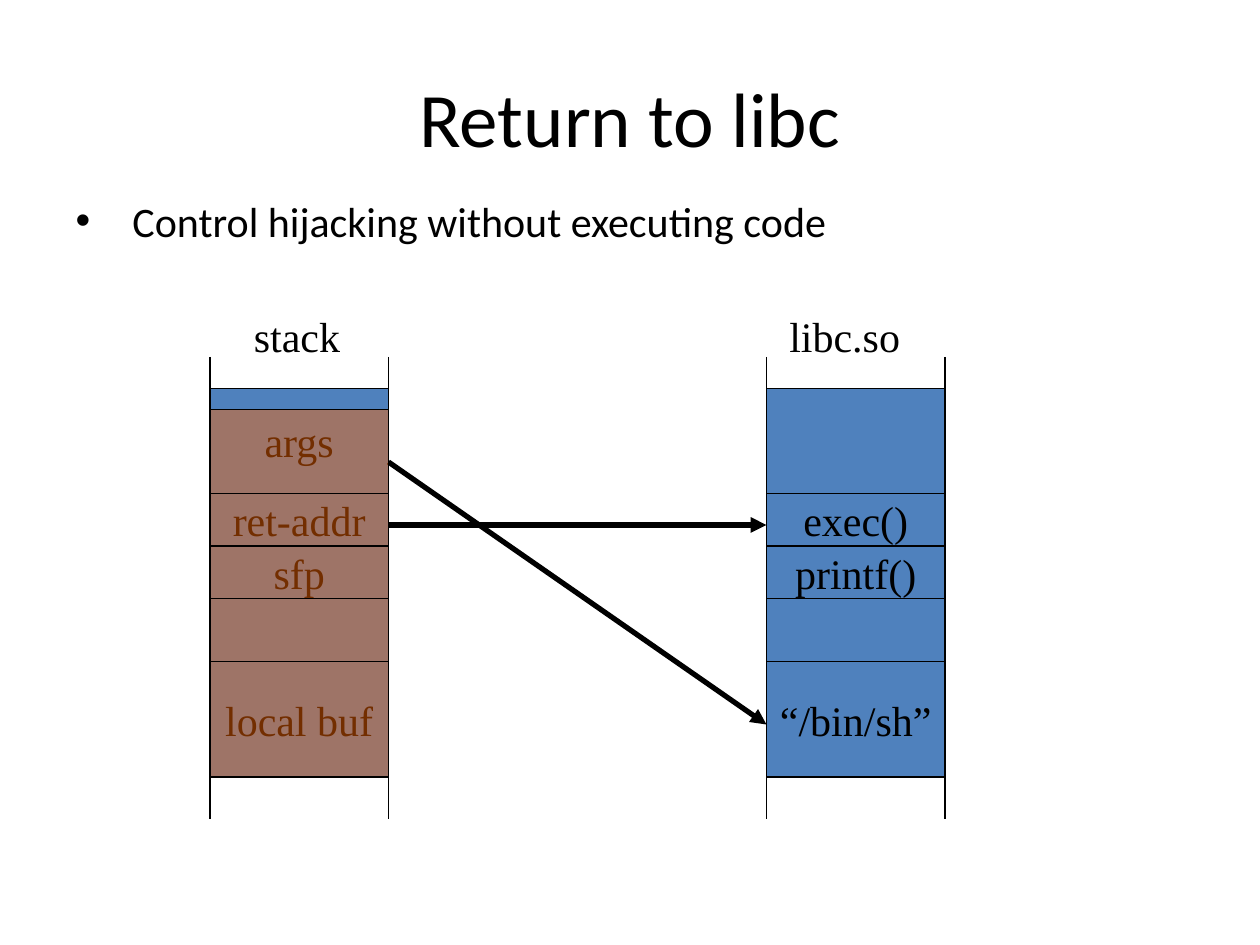
import pptx
import pptx.util
import pptx.dml.color
import pptx.enum.shapes
import pptx.enum.text
import pptx.oxml
import pptx.oxml.ns
import lxml.etree

PX = 7620  # EMU per px, 120 px to the inch
theme = dict(ink="000000", memory="4F81BD", overflow="FF6600", overflow_alpha=45000,
             heading_font="Calibri", diagram_font="Times New Roman",
             title_size=44, text_size=24, thin=0.75, thick=3)
RGB = pptx.dml.color.RGBColor.from_string
ALIGN = pptx.enum.text.PP_ALIGN
ANCHOR = pptx.enum.text.MSO_ANCHOR
AUTO = pptx.enum.text.MSO_AUTO_SIZE
RECT = pptx.enum.shapes.MSO_SHAPE.RECTANGLE
STRAIGHT = pptx.enum.shapes.MSO_CONNECTOR.STRAIGHT
qn = pptx.oxml.ns.qn


def write(frame, text, font=theme["diagram_font"], size=theme["text_size"],
          align=ALIGN.CENTER, anchor=ANCHOR.MIDDLE, wrap=False, fit=AUTO.NONE):
    frame.word_wrap, frame.auto_size, frame.vertical_anchor = wrap, fit, anchor
    paragraph = frame.paragraphs[0]
    paragraph.alignment = align
    run = paragraph.add_run()
    run.text = text
    run.font.name, run.font.size = font, pptx.util.Pt(size)
    run.font.color.rgb = RGB(theme["ink"])
    return paragraph


def draw_line(x1, y1, x2, y2, width=theme["thin"], arrow=False):
    line = slide.shapes.add_connector(STRAIGHT, x1 * PX, y1 * PX, x2 * PX, y2 * PX)
    line.line.color.rgb = RGB(theme["ink"])
    line.line.width = pptx.util.Pt(width)
    if arrow:
        lxml.etree.SubElement(line.line._get_or_add_ln(), qn("a:tailEnd"), type="triangle")
    lxml.etree.SubElement(line._element.spPr, qn("a:effectLst"))


deck = pptx.Presentation()
deck.slide_width, deck.slide_height = 1200 * PX, 900 * PX
slide = deck.slides.add_slide(deck.slide_layouts[1])

# Title and bullet
title, body = slide.placeholders
title.left, title.top, title.width, title.height = 60 * PX, 36 * PX, 1080 * PX, 150 * PX
write(title.text_frame, "Return to libc", font=theme["heading_font"],
      size=theme["title_size"], wrap=True)
body.left, body.top, body.width, body.height = 60 * PX, 180 * PX, 1020 * PX, 660 * PX
bullet = write(body.text_frame, " Control hijacking without executing code",
               font=theme["heading_font"], align=ALIGN.LEFT, anchor=ANCHOR.TOP, wrap=True)
indent = bullet._p.get_or_add_pPr()
indent.set("marL", str(45 * PX))
indent.set("indent", str(-45 * PX))

# Memory columns: cells, side rails and heading
COLUMN_WIDTH = 170
STACK_X, LIBC_X = 200, 730
CELL_EDGES = [370, 470, 520, 570, 630, 740]
columns = [
    (STACK_X, "stack", 230, 107, ["args", "ret-addr", "sfp", "", "local buf"]),
    (LIBC_X, "libc.so", 740, 130, ["", "exec()", "printf()", "", "“/bin/sh”"]),
]
for left, heading, heading_x, heading_width, cells in columns:
    for content, top, bottom in zip(cells, CELL_EDGES, CELL_EDGES[1:]):
        cell = slide.shapes.add_shape(RECT, left * PX, top * PX,
                                      COLUMN_WIDTH * PX, (bottom - top) * PX)
        cell.shadow.inherit = False
        cell.fill.solid()
        cell.fill.fore_color.rgb = RGB(theme["memory"])
        cell.line.color.rgb = RGB(theme["ink"])
        cell.line.width = pptx.util.Pt(theme["thin"])
        if content:
            write(cell.text_frame, content)
    for rail_x in (left, left + COLUMN_WIDTH):
        draw_line(rail_x, 340, rail_x, 780)
    label = slide.shapes.add_textbox(heading_x * PX, 290 * PX, heading_width * PX, 60 * PX)
    write(label.text_frame, heading, align=ALIGN.LEFT, anchor=ANCHOR.TOP,
          fit=AUTO.SHAPE_TO_FIT_TEXT)

# Pointers from the stack into libc
STACK_RIGHT = STACK_X + COLUMN_WIDTH
for start_y, end_y in [(500, 500), (440, 690)]:
    draw_line(STACK_RIGHT, start_y, LIBC_X, end_y, width=theme["thick"], arrow=True)

# Translucent overflow over the stack, with the cell borders drawn again on top
overflow = slide.shapes.add_shape(RECT, STACK_X * PX, 390 * PX, COLUMN_WIDTH * PX, 350 * PX)
overflow.shadow.inherit = False
overflow.fill.solid()
overflow.fill.fore_color.rgb = RGB(theme["overflow"])
tint = overflow._element.spPr.find(qn("a:solidFill")).find(qn("a:srgbClr"))
lxml.etree.SubElement(tint, qn("a:alpha"), val=str(theme["overflow_alpha"]))
overflow.line.color.rgb = RGB(theme["ink"])
overflow.line.width = pptx.util.Pt(theme["thin"])
for edge in CELL_EDGES[1:-1]:
    draw_line(STACK_RIGHT, edge, STACK_X, edge)

deck.save("out.pptx")
